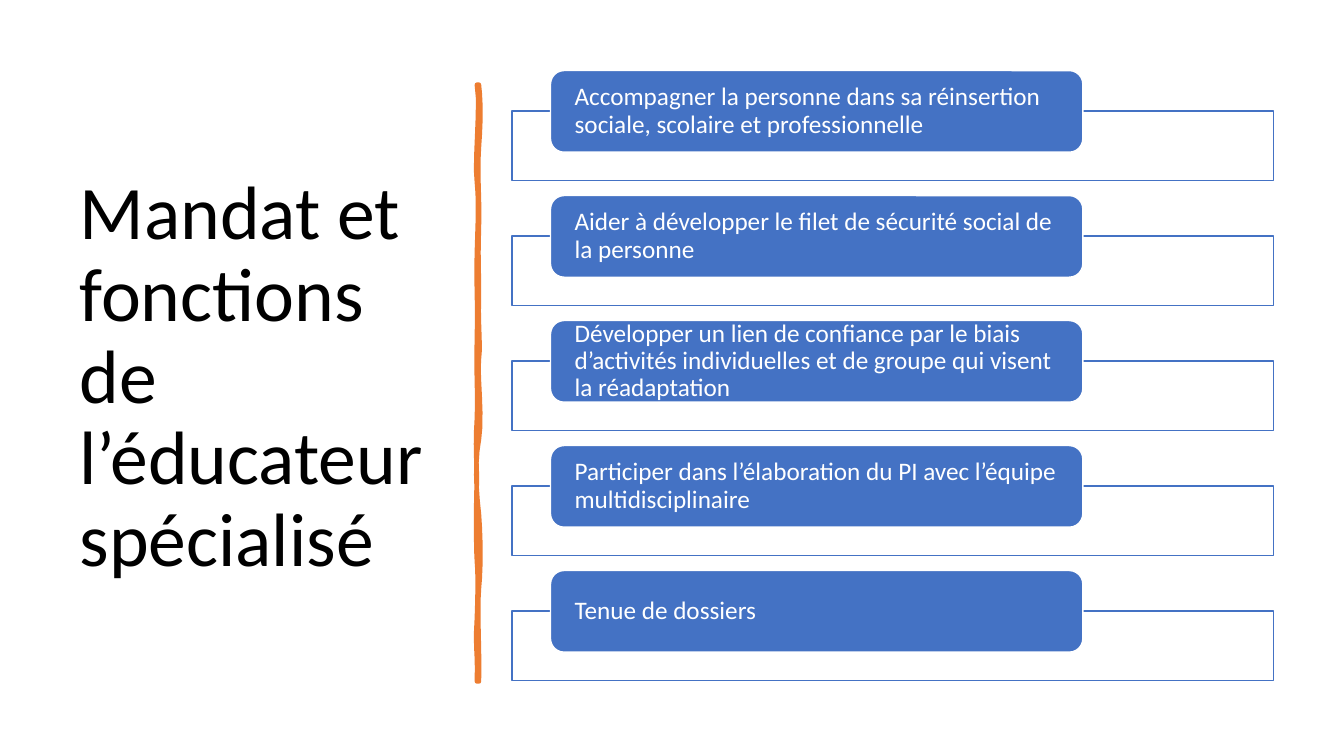
from dataclasses import dataclass

from lxml import etree
from pptx import Presentation
from pptx.dml.color import RGBColor
from pptx.enum import shapes as shp, text as txt
from pptx.oxml.ns import qn
from pptx.shapes.autoshape import Shape
from pptx.slide import Slide
from pptx.text.text import TextFrame
from pptx.util import Inches, Pt

COLORS = {"white": "FFFFFF", "black": "000000", "blue": "4472C4", "orange": "ED7D31"}
FONT = "Calibri"
FIRST_TOP, PITCH = 0.7, 1.24


@dataclass
class Duty:
    wording: str
    top: float


@dataclass
class Curve:
    """Cubic segment: two control points and an end point, in inches."""
    first: tuple[float, float]
    second: tuple[float, float]
    end: tuple[float, float]


DUTIES = [Duty(wording, FIRST_TOP + PITCH * row) for row, wording in enumerate([
    "Accompagner la personne dans sa réinsertion sociale, scolaire et professionnelle",
    "Aider à développer le filet de sécurité social de la personne",
    "Développer un lien de confiance par le biais d’activités individuelles "
    "et de groupe qui visent la réadaptation",
    "Participer dans l’élaboration du PI avec l’équipe multidisciplinaire",
    "Tenue de dossiers",
])]

BRUSH_START = (4.75, 0.84)
BRUSH_CURVES = [
    Curve((4.77, 1.02), (4.77, 1.19), (4.75, 1.46)),
    Curve((4.73, 1.73), (4.76, 1.95), (4.75, 2.26)),
    Curve((4.74, 2.57), (4.75, 2.62), (4.75, 2.94)),
    Curve((4.74, 3.25), (4.77, 3.42), (4.75, 3.56)),
    Curve((4.73, 3.7), (4.79, 4.14), (4.75, 4.36)),
    Curve((4.71, 4.57), (4.72, 4.84), (4.75, 5.1)),
    Curve((4.77, 5.36), (4.77, 5.64), (4.75, 5.84)),
    Curve((4.73, 6.03), (4.76, 6.5), (4.75, 6.76)),
    Curve((4.74, 6.76), (4.73, 6.76), (4.73, 6.76)),
    Curve((4.74, 6.46), (4.71, 6.44), (4.73, 6.13)),
    Curve((4.74, 5.83), (4.74, 5.7), (4.73, 5.57)),
    Curve((4.72, 5.44), (4.72, 4.95), (4.73, 4.77)),
    Curve((4.73, 4.59), (4.71, 4.45), (4.73, 4.15)),
    Curve((4.74, 3.86), (4.72, 3.73), (4.73, 3.35)),
    Curve((4.74, 2.98), (4.72, 2.81), (4.73, 2.5)),
    Curve((4.74, 2.18), (4.75, 2), (4.73, 1.81)),
    Curve((4.7, 1.63), (4.77, 1.04), (4.73, 0.84)),
]


def rgb(name: str) -> RGBColor:
    return RGBColor.from_string(COLORS[name])


def paint(shape: Shape, fill: str, line: str, width: float) -> None:
    shape.shadow.inherit = False
    shape.fill.solid()
    shape.fill.fore_color.rgb = rgb(fill)
    shape.line.color.rgb = rgb(line)
    shape.line.width = Pt(width)


def write(frame: TextFrame, wording: str, size: float, color: str) -> None:
    frame.word_wrap = True
    frame.auto_size = txt.MSO_AUTO_SIZE.NONE
    frame.vertical_anchor = txt.MSO_ANCHOR.MIDDLE
    frame.text = wording
    paragraph = frame.paragraphs[0]
    paragraph.alignment = txt.PP_ALIGN.LEFT
    paragraph.line_spacing = 0.9
    paragraph.font.size = Pt(size)
    paragraph.font.name = FONT
    paragraph.font.color.rgb = rgb(color)


def add_title(slide: Slide) -> None:
    title = slide.shapes.title
    title.left, title.top = Inches(0.69), Inches(0.7)
    title.width, title.height = Inches(3.74), Inches(6.11)
    write(title.text_frame, "Mandat et fonctions de l’éducateur spécialisé", 54, "black")


def sample(start: tuple[float, float], curve: Curve, steps: int = 6) -> list[tuple[int, int]]:
    points = []
    for step in range(1, steps + 1):
        t = step / steps
        weights = ((1 - t) ** 3, 3 * t * (1 - t) ** 2, 3 * t * t * (1 - t), t ** 3)
        knots = (start, curve.first, curve.second, curve.end)
        x, y = (sum(w * knot[axis] for w, knot in zip(weights, knots)) for axis in (0, 1))
        points.append((Inches(x), Inches(y)))
    return points


def add_brush_stroke(slide: Slide) -> None:
    outline = []
    start = BRUSH_START
    for curve in BRUSH_CURVES:
        outline += sample(start, curve)
        start = curve.end
    builder = slide.shapes.build_freeform(Inches(BRUSH_START[0]), Inches(BRUSH_START[1]))
    builder.add_line_segments(outline, close=True)
    stroke = builder.convert_to_shape()
    paint(stroke, "orange", "orange", 3.25)
    line_xml = stroke.line.fill._xPr
    line_xml.set("cap", "rnd")
    etree.SubElement(line_xml, qn("a:round"))


def add_duty(slide: Slide, duty: Duty) -> None:
    # Outlined frame behind the label
    frame = slide.shapes.add_shape(
        shp.MSO_SHAPE.RECTANGLE,
        Inches(5.08), Inches(duty.top + 0.4), Inches(7.55), Inches(0.69))
    paint(frame, "white", "blue", 1)
    fill_color = frame.fill._xPr.find(qn("a:solidFill"))[0]
    etree.SubElement(fill_color, qn("a:alpha"), val="90000")

    # Rounded label
    label = slide.shapes.add_shape(
        shp.MSO_SHAPE.ROUNDED_RECTANGLE,
        Inches(5.46), Inches(duty.top), Inches(5.28), Inches(0.81))
    paint(label, "blue", "white", 1)
    write(label.text_frame, duty.wording, 18, "white")
    label.text_frame.margin_left = label.text_frame.margin_right = Inches(0.2)
    label.text_frame.margin_top = label.text_frame.margin_bottom = 0


def main() -> None:
    deck = Presentation()
    deck.slide_width, deck.slide_height = Inches(13.33), Inches(7.5)
    slide = deck.slides.add_slide(deck.slide_layouts[5])
    add_title(slide)
    add_brush_stroke(slide)
    for duty in DUTIES:
        add_duty(slide, duty)
    deck.save("out.pptx")


if __name__ == "__main__":
    main()
